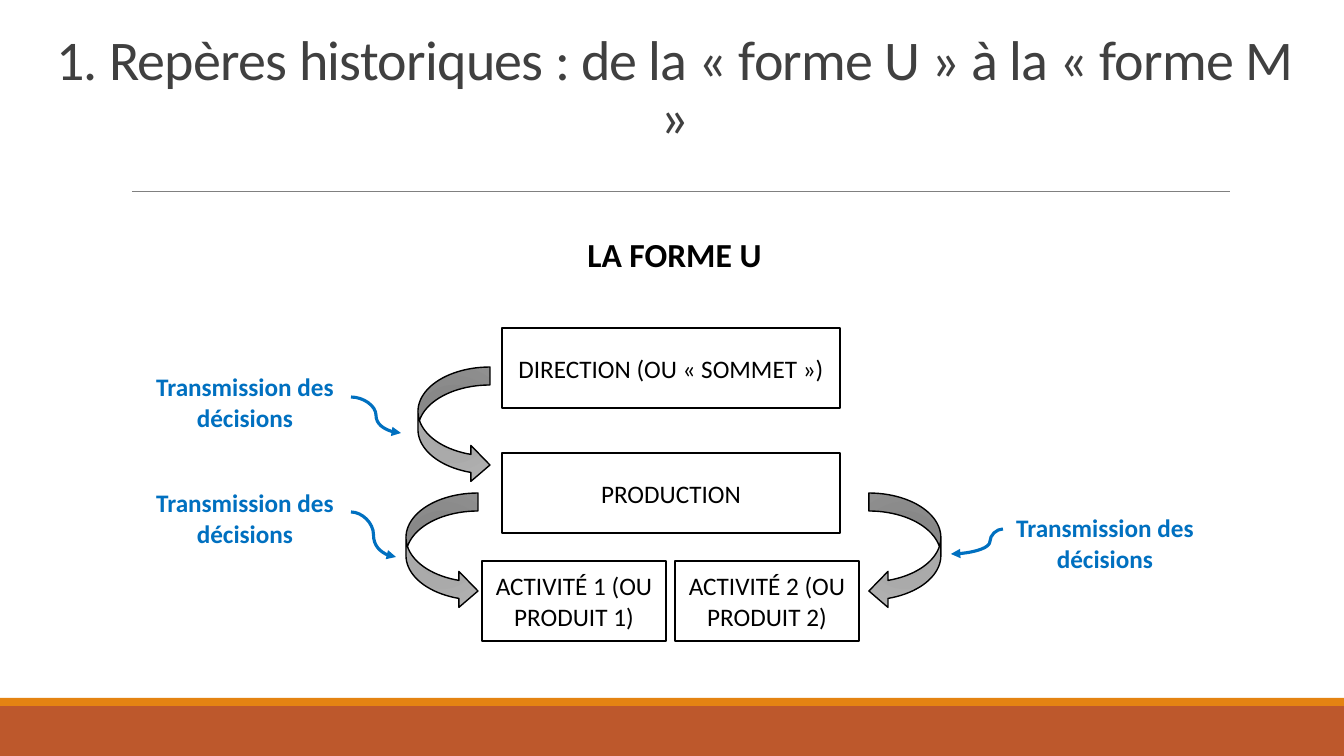
from pptx import Presentation
from pptx.dml.color import RGBColor
from pptx.enum.shapes import MSO_CONNECTOR as LINE, MSO_SHAPE as SHAPE
from pptx.enum.text import MSO_ANCHOR as ANCHOR, PP_ALIGN as ALIGN
from pptx.oxml import parse_xml
from pptx.oxml.ns import nsdecls, qn
from pptx.util import Pt
from lxml.etree import SubElement

EMU_PER_PX = 914400 / 100.8
BLACK, BLUE, GREY, DARK = "000000", "0070C0", "808080", "404040"
RUST, ORANGE = "BD582C", "E48312"
GRADIENT = ((0, "9C9C9C"), (45, "AAAAAA"), (100, "B4B4B4"))


def px(*lengths):
    return [round(length * EMU_PER_PX) for length in lengths]


def color(hex_code):
    return RGBColor.from_string(hex_code)


class SlideBuilder:
    def __init__(self, slide, font="Calibri"):
        self.shapes = slide.shapes
        self.font = font

    def set_text(self, box, text, size, hex_code=BLACK, bold=False, anchor=ANCHOR.MIDDLE):
        frame = box.text_frame
        frame.word_wrap = True
        frame.vertical_anchor = anchor
        para = frame.paragraphs[0]
        para.alignment = ALIGN.CENTER
        para.font.name = self.font
        para.font.size = Pt(size)
        para.font.bold = bold
        para.font.color.rgb = color(hex_code)
        span = para.add_run()
        span.text = text
        span.font.color.rgb = color(hex_code)
        return para

    def label(self, text, at, size, **style):
        return self.set_text(self.shapes.add_textbox(*px(*at)), text, size, **style)

    def title(self, text, at):
        para = self.label(text, at, 40, hex_code=DARK, anchor=ANCHOR.BOTTOM)
        para.line_spacing = 0.85
        para.runs[0].font._element.set("spc", "-50")

    def shape(self, kind, at):
        shape = self.shapes.add_shape(kind, *px(*at))
        shape.shadow.inherit = False
        return shape

    def band(self, at, hex_code):
        band = self.shape(SHAPE.RECTANGLE, at)
        band.fill.solid()
        band.fill.fore_color.rgb = color(hex_code)
        band.line.fill.background()

    def outline(self, shape, hex_code, width):
        shape.line.color.rgb = color(hex_code)
        shape.line.width = Pt(width)

    def unit(self, text, at):
        """Draw one outlined box of the organisation chart."""
        box = self.shape(SHAPE.RECTANGLE, at)
        box.fill.background()
        self.outline(box, BLACK, 1.25)
        self.set_text(box, text, 18)

    def curved_arrow(self, at, mirrored=False):
        arrow = self.shape(SHAPE.CURVED_RIGHT_ARROW, at)
        for index, value in enumerate((0.25, 0.5, 0.265)):
            arrow.adjustments[index] = value
        self.outline(arrow, BLACK, 1)
        properties = arrow._element.spPr
        if mirrored:
            properties.find(qn("a:xfrm")).set("flipH", "1")
        stops = "".join(
            f'<a:gs pos="{pos * 1000}"><a:srgbClr val="{code}"/></a:gs>'
            for pos, code in GRADIENT
        )
        edges = " ".join(f'{edge}="100000"' for edge in "ltrb")
        properties.find(qn("a:prstGeom")).addnext(parse_xml(
            f'<a:gradFill {nsdecls("a")}><a:gsLst>{stops}</a:gsLst>'
            f'<a:path path="circle"><a:fillToRect {edges}/></a:path></a:gradFill>'
        ))

    def line(self, ends, hex_code, width, kind=LINE.STRAIGHT):
        line = self.shapes.add_connector(kind, *px(*ends))
        self.outline(line, hex_code, width)
        SubElement(line._element.spPr, qn("a:effectLst"))
        return line

    def pointer(self, ends, bend=0.5):
        """Draw a curved arrow whose turn lies at the share bend of its width."""
        properties = self.line(ends, BLUE, 2.25, LINE.CURVE)._element.spPr
        SubElement(properties.find(qn("a:ln")), qn("a:tailEnd"), type="triangle")
        guides = properties.find(qn("a:prstGeom")).get_or_add_avLst()
        SubElement(guides, qn("a:gd"), name="adj1", fmla=f"val {round(bend * 100000)}")


def main():
    deck = Presentation()
    deck.slide_width, deck.slide_height = px(1344, 756)
    page = SlideBuilder(deck.slides.add_slide(deck.slide_layouts[6]))

    page.band((0, 706, 1344, 50), RUST)
    page.band((0, 698, 1344, 8), ORANGE)
    page.line((132, 191, 1230, 191), GREY, 0.5)
    page.title("1. Repères historiques : de la « forme U » à la « forme M »",
               (27, 69, 1295, 85))
    page.label("LA FORME U", (550, 227, 249, 54), 24, bold=True)

    for text, left, top, width in (
        ("DIRECTION (OU « SOMMET »)", 502, 328, 338),
        ("PRODUCTION", 502, 453, 338),
        ("ACTIVITÉ 1 (OU PRODUIT 1)", 482, 561, 184),
        ("ACTIVITÉ 2 (OU PRODUIT 2)", 675, 561, 184),
    ):
        page.unit(text, (left, top, width, 80))

    for left, top, mirrored in ((418, 367, False), (406, 493, False), (869, 493, True)):
        page.curved_arrow((left, top, 72, 116), mirrored)

    for left, top, ends, bend in (
        (117, 377, (351, 397, 401, 433), 0.5),
        (117, 493, (351, 512, 396, 557), 0.5),
        (977, 518, (1003, 529, 951, 554), 0.25),
    ):
        page.label("Transmission des décisions", (left, top, 256, 50), 18,
                   hex_code=BLUE, bold=True)
        page.pointer(ends, bend)

    deck.save("out.pptx")


if __name__ == "__main__":
    main()
